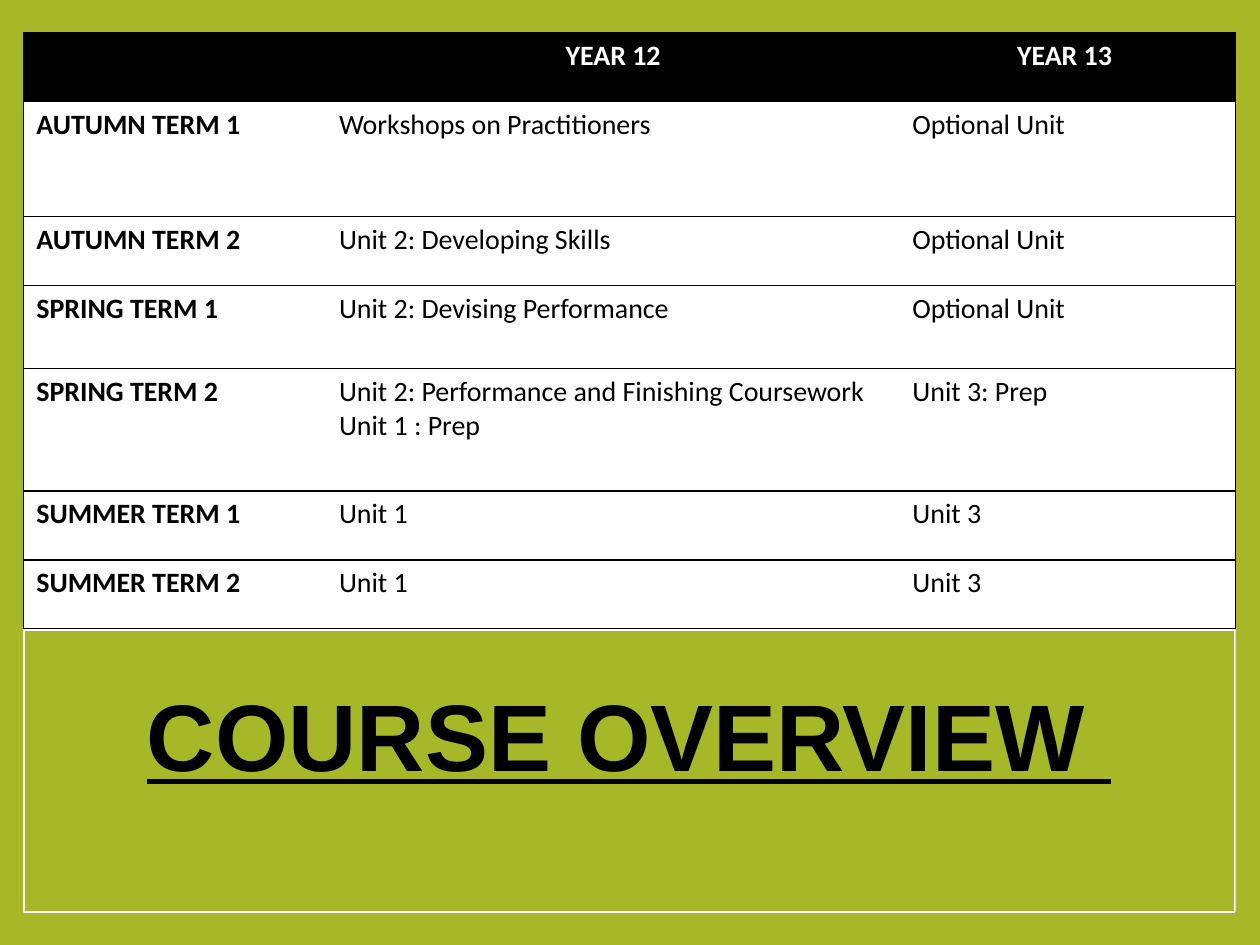
import pptx
import pptx.util
import pptx.dml.color
import pptx.enum.shapes
import pptx.enum.text
import pptx.oxml.ns
from dataclasses import dataclass
from lxml import etree
from pptx.util import Cm, Pt

RGB = pptx.dml.color.RGBColor.from_string
ALIGN = pptx.enum.text.PP_ALIGN


@dataclass(frozen=True)
class Theme:
    green: str = "A6B727"
    white: str = "FFFFFF"
    black: str = "000000"
    body_font: str = "Calibri"
    title_font: str = "Arial"
    body_size: float = 16
    title_size: float = 54
    rule: float = 0.79


T = Theme()
COLUMNS = [6.1, 11.56, 6.77]
ROW_HEIGHTS = [1.39, 2.32, 1.39, 1.67, 2.47, 1.39, 1.39]
ROWS = [
    ["", "YEAR 12", "YEAR 13 "],
    ["AUTUMN TERM 1", "Workshops on Practitioners", "Optional Unit"],
    ["AUTUMN TERM 2", "Unit 2: Developing Skills", "Optional Unit"],
    ["SPRING TERM 1", "Unit 2: Devising Performance", "Optional Unit"],
    ["SPRING TERM 2",
     "Unit 2: Performance and Finishing Coursework\nUnit 1 : Prep",
     "Unit 3: Prep"],
    ["SUMMER TERM 1", "Unit 1", "Unit 3"],
    ["SUMMER TERM 2", "Unit 1", "Unit 3"],
]


def add_panel(s, left, top, width, height, fill, line=None):
    sp = s.shapes.add_shape(pptx.enum.shapes.MSO_SHAPE.RECTANGLE,
                            Cm(left), Cm(top), Cm(width), Cm(height))
    sp.shadow.inherit = False
    sp.fill.solid()
    sp.fill.fore_color.rgb = RGB(fill)
    if line:
        sp.line.color.rgb = RGB(line)
        sp.line.width = Pt(1)
    else:
        sp.line.fill.background()


def set_borders(cell, sides):
    """Rule the given sides and leave the others without a line."""
    qn = pptx.oxml.ns.qn
    tc_pr = cell._tc.get_or_add_tcPr()
    for i, side in enumerate("LRTB"):
        ln = etree.Element(qn(f"a:ln{side}"), w=str(Pt(T.rule)))
        if side in sides:
            fill = etree.SubElement(ln, qn("a:solidFill"))
            etree.SubElement(fill, qn("a:srgbClr"), val=T.black)
        else:
            etree.SubElement(ln, qn("a:noFill"))
        tc_pr.insert(i, ln)


def add_term_table(s, left, top):
    tbl = s.shapes.add_table(len(ROWS), len(COLUMNS), Cm(left), Cm(top),
                             Cm(sum(COLUMNS)), Cm(sum(ROW_HEIGHTS))).table
    for col, width in zip(tbl.columns, COLUMNS):
        col.width = Cm(width)
    for row, height in zip(tbl.rows, ROW_HEIGHTS):
        row.height = Cm(height)

    for r, texts in enumerate(ROWS):
        header = r == 0
        for c, text in enumerate(texts):
            cell = tbl.cell(r, c)
            cell.fill.solid()
            cell.fill.fore_color.rgb = RGB(T.black if header else T.white)
            set_borders(cell, "TB" + {0: "L", 2: "R"}.get(c, ""))
            cell.text = text
            for p in cell.text_frame.paragraphs:
                p.alignment = ALIGN.CENTER if header else ALIGN.LEFT
                p.font.name = T.body_font
                p.font.size = Pt(T.body_size)
                p.font.bold = header or c == 0
                p.font.color.rgb = RGB(T.white if header else T.black)


def add_title_band(s, left, top, width, height):
    add_panel(s, left, top, width, height, T.green, T.white)
    inset = 1.93
    tb = s.shapes.add_textbox(Cm(left + inset), Cm(top + 0.36),
                              Cm(width - 2 * inset), Cm(3.76))
    tf = tb.text_frame
    tf.word_wrap = True
    tf.vertical_anchor = pptx.enum.text.MSO_ANCHOR.MIDDLE
    p = tf.paragraphs[0]
    p.text = "COURSE OVERVIEW "
    p.alignment = ALIGN.CENTER
    p.line_spacing = 0.9
    p.font.name = T.title_font
    p.font.size = Pt(T.title_size)
    p.font.bold = True
    p.font.underline = True
    p.font.color.rgb = RGB(T.black)


def main():
    prs = pptx.Presentation()
    prs.slide_width, prs.slide_height = Cm(25.4), Cm(19.05)
    s = prs.slides.add_slide(prs.slide_layouts[6])

    # Green surround and white page
    add_panel(s, 0, 0, 25.4, 19.05, T.green)
    add_panel(s, 0.48, 0.69, 24.43, 17.7, T.white)
    # Title band under the term table
    add_title_band(s, 0.48, 12.7, 24.41, 5.69)
    add_term_table(s, 0.48, 0.66)

    prs.save("out.pptx")


if __name__ == "__main__":
    main()
